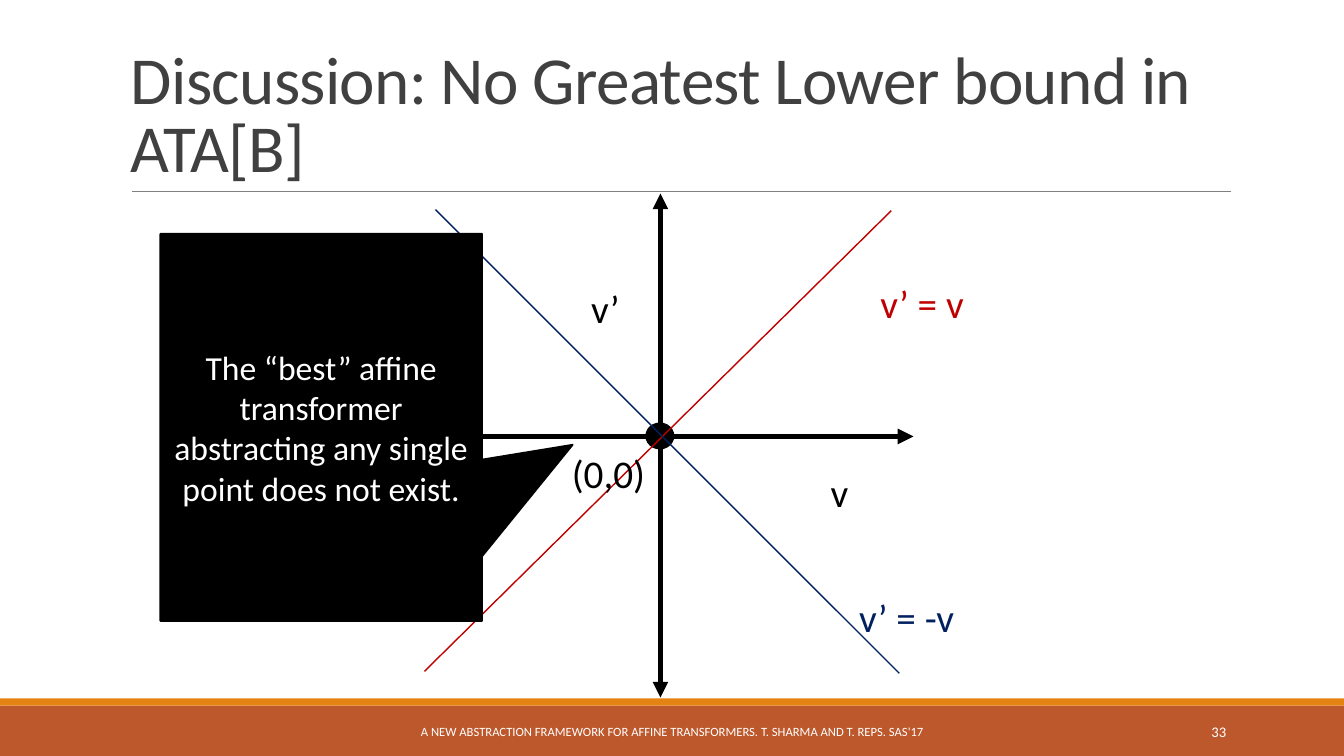
from pptx import Presentation
from pptx.dml.color import RGBColor
from pptx.enum.shapes import MSO_CONNECTOR, MSO_SHAPE
from pptx.enum.text import MSO_ANCHOR, PP_ALIGN
from pptx.oxml.ns import qn
from pptx.util import Inches, Pt
from lxml.etree import SubElement

BLACK = RGBColor(0x00, 0x00, 0x00)
WHITE = RGBColor(0xFF, 0xFF, 0xFF)
DARK = RGBColor(0x40, 0x40, 0x40)
GRAY = RGBColor(0x80, 0x80, 0x80)
RUST = RGBColor(0xBD, 0x58, 0x2C)
ORANGE = RGBColor(0xE4, 0x83, 0x12)
RED = RGBColor(0xC0, 0x00, 0x00)
NAVY = RGBColor(0x00, 0x20, 0x60)


def write(shape, text, size, color, align=PP_ALIGN.CENTER, anchor=MSO_ANCHOR.MIDDLE):
    """Fill a shape with one styled paragraph and return the paragraph."""
    frame = shape.text_frame
    frame.word_wrap = True
    frame.vertical_anchor = anchor
    para = frame.paragraphs[0]
    para.text = text
    para.alignment = align
    para.font.name = "Calibri"
    para.font.size = Pt(size)
    para.font.color.rgb = color
    return para


def label(slide, box, text, size, color, **style):
    """Add a text box and return its paragraph."""
    area = slide.shapes.add_textbox(*map(Inches, box))
    return write(area, text, size, color, **style)


def block(slide, kind, box, color, edge=None):
    """Add a filled shape, outlined when an edge width is given."""
    shape = slide.shapes.add_shape(kind, *map(Inches, box))
    shape.shadow.inherit = False
    shape.fill.solid()
    shape.fill.fore_color.rgb = color
    if edge:
        shape.line.color.rgb = color
        shape.line.width = Pt(edge)
    else:
        shape.line.fill.background()
    return shape


def stroke(slide, start, end, color, width, arrows=False):
    """Add a straight line, with arrowheads at both ends if asked."""
    line = slide.shapes.add_connector(
        MSO_CONNECTOR.STRAIGHT, *map(Inches, (*start, *end)))
    line.line.color.rgb = color
    line.line.width = Pt(width)
    if arrows:
        for tag in ("a:headEnd", "a:tailEnd"):
            SubElement(line.line._get_or_add_ln(), qn(tag), type="triangle")
    SubElement(line._element.spPr, qn("a:effectLst"))


def header(slide, left, top, width, height):
    """Place the title and the rule beneath it."""
    para = label(slide, (left, top, width, height),
                 "Discussion: No Greatest Lower bound in ATA[B]", 48, DARK,
                 align=PP_ALIGN.LEFT, anchor=MSO_ANCHOR.BOTTOM)
    para.line_spacing = 0.85
    para.runs[0].font._element.set("spc", "-50")
    base = top + height
    stroke(slide, (left + 0.11, base), (left + width + 0.01, base), GRAY, 0.5)


def footer(slide, left, top, width, height):
    """Place the two bands, the citation and the page number."""
    block(slide, MSO_SHAPE.RECTANGLE, (left, top + 0.07, width, height - 0.07), RUST)
    block(slide, MSO_SHAPE.RECTANGLE, (left, top, width, 0.07), ORANGE)
    label(slide, (left + 4.03, top + 0.13, 5.27, 0.4),
          "A NEW ABSTRACTION FRAMEWORK FOR AFFINE TRANSFORMERS. "
          "T. SHARMA AND T. REPS. SAS'17", 9, WHITE)
    label(slide, (left + 10.83, top + 0.13, 1.43, 0.4), "33", 10.5, WHITE,
          align=PP_ALIGN.RIGHT)


def graph(slide, left, top, width, height):
    """Draw the axes, the origin, both diagonals and their labels."""
    right, low = left + width, top + height
    mid, level = left + width / 2 - 0.01, top + 2.41
    stroke(slide, (mid, top), (mid, low), BLACK, 3.75, arrows=True)
    stroke(slide, (right, level), (left, level), BLACK, 3.75, arrows=True)
    block(slide, MSO_SHAPE.OVAL, (mid - 0.14, level - 0.13, 0.27, 0.25), BLACK, 1.25)
    stroke(slide, (mid + 2.29, top + 0.17), (mid - 2.34, low - 0.26), RED, 1)
    stroke(slide, (mid - 2.23, top + 0.16), (mid + 2.37, low - 0.24), NAVY, 1)
    for dx, dy, wide, high, text, color in (
            (1.29, 0.21, 0.97, 0.68, "v", BLACK),
            (-1.03, -1.62, 0.97, 0.68, "v’", BLACK),
            (1.95, -1.68, 1.29, 0.71, "v’ = v", RED),
            (1.84, 1.43, 1.29, 0.71, "v’ = -v ", NAVY),
            (-1.03, 0.02, 1.03, 0.68, "(0,0)", BLACK)):
        label(slide, (mid + dx, level + dy, wide, high), text, 28, color)


def callout(slide, *box):
    """Place the black callout that points at the origin."""
    shape = block(slide, MSO_SHAPE.RECTANGULAR_CALLOUT, box, BLACK, 1.25)
    shape.adjustments[0] = 0.782
    shape.adjustments[1] = 0.045
    write(shape, "The “best” affine transformer abstracting any single "
          "point does not exist.", 24, WHITE)


def main():
    """Build and save the slide."""
    deck = Presentation()
    deck.slide_width, deck.slide_height = Inches(13.33), Inches(7.5)
    slide = deck.slides.add_slide(deck.slide_layouts[6])
    footer(slide, 0, 6.93, 13.33, 0.57)
    header(slide, 1.2, 0.31, 11, 1.59)
    graph(slide, 4.06, 1.92, 5, 5)
    callout(slide, 1.59, 2.32, 3.19, 3.84)
    deck.save("out.pptx")


if __name__ == "__main__":
    main()
